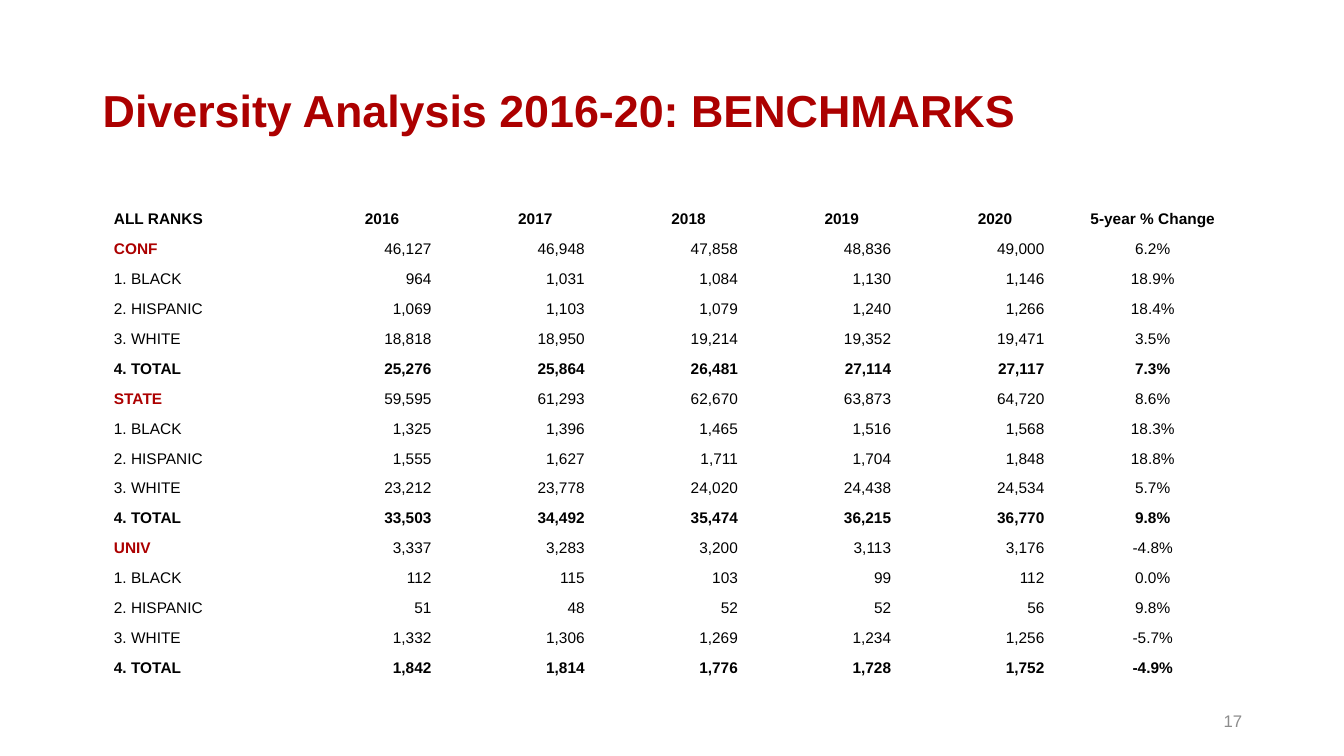
import dataclasses
import typing

import pptx
import pptx.dml.color
import pptx.enum.text
import pptx.slide
import pptx.text.text
import pptx.util

Inches = pptx.util.Inches
ALIGN = pptx.enum.text.PP_ALIGN
ANCHOR = pptx.enum.text.MSO_ANCHOR


@dataclasses.dataclass(frozen=True)
class Theme:
    font: str = "Arial"
    red: str = "AC0000"
    black: str = "000000"
    grey: str = "8C8C8C"
    title_size: int = 32
    page_size: int = 12
    table_size: int = 11


@dataclasses.dataclass(frozen=True)
class TextStyle:
    size: int
    color: str
    bold: bool = False
    align: ALIGN = ALIGN.LEFT


@dataclasses.dataclass(frozen=True)
class Caption:
    text: str
    box: tuple[float, float, float, float]
    style: TextStyle
    spacing: dict[str, typing.Any]


@dataclasses.dataclass(frozen=True)
class Benchmark:
    label: str
    counts: tuple[str, ...]
    change: str


THEME = Theme()
YEARS = ("2016", "2017", "2018", "2019", "2020")
COLUMN_WIDTHS = (1.91, *[1.52] * len(YEARS), 1.61)
TABLE_LEFT, TABLE_TOP, TABLE_HEIGHT = 1.12, 2, 4.76
COUNT_MARGIN = 0.27
GROUPS = ("CONF", "STATE", "UNIV")
TOTAL = "4. TOTAL"

CAPTIONS = (
    Caption("Diversity Analysis 2016-20: BENCHMARKS", (0.92, 0.4, 11.5, 1.45),
            TextStyle(THEME.title_size, THEME.red, bold=True), {"line_spacing": 0.9}),
    Caption("17", (9.42, 6.95, 3, 0.4),
            TextStyle(THEME.page_size, THEME.grey, align=ALIGN.RIGHT),
            {"space_after": pptx.util.Pt(6)}),
)

BENCHMARKS = (
    Benchmark("CONF", ("46,127", "46,948", "47,858", "48,836", "49,000"), "6.2%"),
    Benchmark("1. BLACK", ("964", "1,031", "1,084", "1,130", "1,146"), "18.9%"),
    Benchmark("2. HISPANIC", ("1,069", "1,103", "1,079", "1,240", "1,266"), "18.4%"),
    Benchmark("3. WHITE", ("18,818", "18,950", "19,214", "19,352", "19,471"), "3.5%"),
    Benchmark(TOTAL, ("25,276", "25,864", "26,481", "27,114", "27,117"), "7.3%"),
    Benchmark("STATE", ("59,595", "61,293", "62,670", "63,873", "64,720"), "8.6%"),
    Benchmark("1. BLACK", ("1,325", "1,396", "1,465", "1,516", "1,568"), "18.3%"),
    Benchmark("2. HISPANIC", ("1,555", "1,627", "1,711", "1,704", "1,848"), "18.8%"),
    Benchmark("3. WHITE", ("23,212", "23,778", "24,020", "24,438", "24,534"), "5.7%"),
    Benchmark(TOTAL, ("33,503", "34,492", "35,474", "36,215", "36,770"), "9.8%"),
    Benchmark("UNIV", ("3,337", "3,283", "3,200", "3,113", "3,176"), "-4.8%"),
    Benchmark("1. BLACK", ("112", "115", "103", "99", "112"), "0.0%"),
    Benchmark("2. HISPANIC", ("51", "48", "52", "52", "56"), "9.8%"),
    Benchmark("3. WHITE", ("1,332", "1,306", "1,269", "1,234", "1,256"), "-5.7%"),
    Benchmark(TOTAL, ("1,842", "1,814", "1,776", "1,728", "1,752"), "-4.9%"),
)


def apply_format(target: typing.Any, values: dict[str, typing.Any]) -> None:
    for attribute, value in values.items():
        setattr(target, attribute, value)


def write_text(frame: pptx.text.text.TextFrame, text: str, style: TextStyle) -> None:
    paragraph = frame.paragraphs[0]
    paragraph.alignment = style.align
    run = paragraph.add_run()
    run.text = text
    apply_format(run.font, {"name": THEME.font, "size": pptx.util.Pt(style.size),
                            "bold": style.bold})
    run.font.color.rgb = pptx.dml.color.RGBColor.from_string(style.color)


def draw_caption(slide: pptx.slide.Slide, caption: Caption) -> None:
    frame = slide.shapes.add_textbox(*map(Inches, caption.box)).text_frame
    apply_format(frame, {"word_wrap": True, "vertical_anchor": ANCHOR.MIDDLE})
    write_text(frame, caption.text, caption.style)
    apply_format(frame.paragraphs[0], caption.spacing)


def cell_style(benchmark: Benchmark, column: int, is_header: bool) -> TextStyle:
    is_label = column == 0
    is_group = is_label and benchmark.label in GROUPS
    is_count = 0 < column <= len(YEARS) and not is_header
    align = ALIGN.LEFT if is_label else ALIGN.RIGHT if is_count else ALIGN.CENTER
    return TextStyle(THEME.table_size, THEME.red if is_group else THEME.black,
                     is_header or is_group or benchmark.label == TOTAL, align)


def draw_benchmarks(slide: pptx.slide.Slide) -> None:
    header = Benchmark("ALL RANKS", YEARS, "5-year % Change")
    rows = (header, *BENCHMARKS)
    table = slide.shapes.add_table(
        len(rows), len(COLUMN_WIDTHS), Inches(TABLE_LEFT), Inches(TABLE_TOP),
        Inches(sum(COLUMN_WIDTHS)), Inches(TABLE_HEIGHT)).table
    apply_format(table, {"first_row": False, "horz_banding": False})
    for column, width in zip(table.columns, COLUMN_WIDTHS):
        column.width = Inches(width)
    for row_index, benchmark in enumerate(rows):
        texts = (benchmark.label, *benchmark.counts, benchmark.change)
        for column_index, text in enumerate(texts):
            cell = table.cell(row_index, column_index)
            style = cell_style(benchmark, column_index, benchmark is header)
            right = COUNT_MARGIN if style.align == ALIGN.RIGHT else 0.01
            apply_format(cell, {
                "margin_left": Inches(0.01), "margin_right": Inches(right),
                "margin_top": Inches(0.04), "margin_bottom": Inches(0.04),
                "vertical_anchor": ANCHOR.BOTTOM})
            cell.fill.background()
            write_text(cell.text_frame, text, style)


def main() -> None:
    presentation = pptx.Presentation()
    apply_format(presentation, {"slide_width": Inches(13.33), "slide_height": Inches(7.5)})
    slide = presentation.slides.add_slide(presentation.slide_layouts[6])
    for caption in CAPTIONS:
        draw_caption(slide, caption)
    draw_benchmarks(slide)
    presentation.save("out.pptx")


if __name__ == "__main__":
    main()
